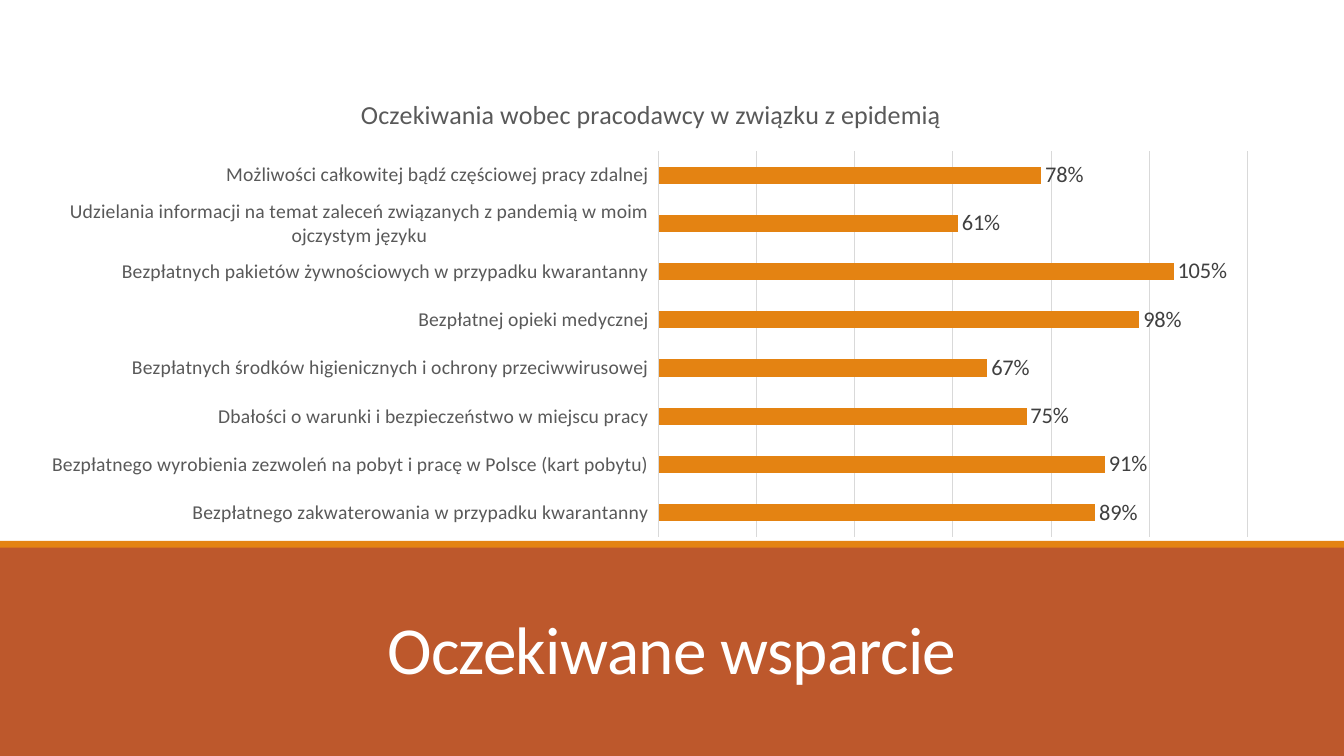
from dataclasses import dataclass

from lxml.etree import SubElement
from pptx import Presentation
from pptx.chart.data import CategoryChartData
from pptx.dml.color import RGBColor
from pptx.enum.chart import XL_CHART_TYPE, XL_LABEL_POSITION, XL_TICK_LABEL_POSITION, XL_TICK_MARK
from pptx.enum.shapes import MSO_SHAPE
from pptx.enum.text import MSO_ANCHOR, MSO_AUTO_SIZE, PP_ALIGN
from pptx.oxml import parse_xml
from pptx.oxml.ns import nsdecls, qn
from pptx.util import Inches, Pt


@dataclass(frozen=True)
class Theme:
    font: str = "Calibri"
    rust: str = "BD582C"
    orange: str = "E48312"
    white: str = "FFFFFF"
    grey: str = "595959"
    dark: str = "404040"
    rule: str = "D9D9D9"
    title_size: float = 48
    chart_title_size: float = 18.6
    label_size: float = 16
    category_size: float = 14


EXPECTATIONS = [
    ("Bezpłatnego zakwaterowania w przypadku kwarantanny", 0.89),
    ("Bezpłatnego wyrobienia zezwoleń na pobyt i pracę w Polsce (kart pobytu)", 0.91),
    ("Dbałości o warunki i bezpieczeństwo w miejscu pracy", 0.75),
    ("Bezpłatnych środków higienicznych i ochrony przeciwwirusowej", 0.67),
    ("Bezpłatnej opieki medycznej", 0.98),
    ("Bezpłatnych pakietów żywnościowych w przypadku kwarantanny", 1.05),
    ("Udzielania informacji na temat zaleceń związanych z pandemią w moim ojczystym języku", 0.61),
    ("Możliwości całkowitej bądź częściowej pracy zdalnej", 0.78),
]


class SlideBuilder:
    COLUMNS, ROWS = 40, 22.5

    def __init__(self, deck, theme):
        self.theme = theme
        self.column = deck.slide_width / self.COLUMNS
        self.row = deck.slide_height / self.ROWS
        self.page = deck.slides.add_slide(deck.slide_layouts[5])

    def place(self, left, top, width, height):
        return (round(left * self.column), round(top * self.row),
                round(width * self.column), round(height * self.row))

    def style(self, font, size, color):
        font.name = self.theme.font
        font.size = Pt(size)
        font.bold = False
        font.color.rgb = RGBColor.from_string(color)

    def rule(self, line):
        line.color.rgb = RGBColor.from_string(self.theme.rule)
        line.width = Pt(0.75)

    def band(self, top, height, color):
        box = self.page.shapes.add_shape(
            MSO_SHAPE.RECTANGLE, *self.place(0, top, self.COLUMNS, height))
        box.shadow.inherit = False
        box.fill.solid()
        box.fill.fore_color.rgb = RGBColor.from_string(color)
        box.line.fill.background()
        return box

    def title(self, text, area, behind):
        box = self.page.shapes.title
        box.left, box.top, box.width, box.height = self.place(*area)
        behind.element.addnext(box.element)
        frame = box.text_frame
        frame.text = text
        frame.word_wrap = True
        frame.auto_size = MSO_AUTO_SIZE.NONE
        frame.vertical_anchor = MSO_ANCHOR.BOTTOM
        para = frame.paragraphs[0]
        para.alignment = PP_ALIGN.CENTER
        para.line_spacing = 0.85
        span = para.runs[0]
        self.style(span.font, self.theme.title_size, self.theme.white)
        span.font.element.set("spc", "-50") if hasattr(span.font, "element") else \
            span._r.get_or_add_rPr().set("spc", "-50")

    def bar_chart(self, heading, rows, area, plot_area):
        theme = self.theme
        data = CategoryChartData(number_format="0%")
        data.categories = [name for name, _ in rows]
        data.add_series("Series 1", [value for _, value in rows])
        chart = self.page.shapes.add_chart(
            XL_CHART_TYPE.BAR_CLUSTERED, *self.place(*area), data).chart
        self.style(chart.font, theme.label_size, theme.dark)
        chart.has_legend = False
        chart.has_title = True
        frame = chart.chart_title.text_frame
        frame.text = heading
        self.style(frame.paragraphs[0].runs[0].font, theme.chart_title_size, theme.grey)

        categories = chart.category_axis
        categories.major_tick_mark = XL_TICK_MARK.NONE
        categories.tick_label_position = XL_TICK_LABEL_POSITION.LOW
        self.style(categories.tick_labels.font, theme.category_size, theme.grey)
        self.rule(categories.format.line)

        values = chart.value_axis
        values.minimum_scale, values.maximum_scale, values.major_unit = 0, 1.2, 0.2
        values.visible = False
        self.rule(values.major_gridlines.format.line)

        plot = chart.plots[0]
        plot.gap_width = 182
        plot.vary_by_categories = False
        series = plot.series[0]
        series.format.fill.solid()
        series.format.fill.fore_color.rgb = RGBColor.from_string(theme.orange)
        labels = series.data_labels
        labels.show_value = True
        labels.position = XL_LABEL_POSITION.OUTSIDE_END
        labels.number_format = "0%"
        labels.number_format_is_linked = False
        self.style(labels.font, theme.label_size, theme.dark)
        self.fix_plot_area(chart, plot_area)

    def fix_plot_area(self, chart, plot_area):
        plot = chart.element.find(".//" + qn("c:plotArea"))
        for layout in plot.findall(qn("c:layout")):
            plot.remove(layout)
        layout = parse_xml(f"<c:layout {nsdecls('c')}><c:manualLayout/></c:layout>")
        settings = [("layoutTarget", "inner"), ("xMode", "edge"), ("yMode", "edge")]
        settings += zip("xywh", plot_area)
        for tag, value in settings:
            SubElement(layout[0], qn(f"c:{tag}")).set("val", str(value))
        plot.insert(0, layout)


def main():
    deck = Presentation()
    deck.slide_width, deck.slide_height = Inches(13.33), Inches(7.5)
    theme = Theme()
    slide = SlideBuilder(deck, theme)
    footer = slide.band(16.25, 6.25, theme.rust)
    slide.title("Oczekiwane wsparcie", (3.5, 17.22, 33, 3.4), footer)
    slide.band(16.1, 0.2, theme.orange)
    slide.bar_chart("Oczekiwania wobec pracodawcy w związku z epidemią", EXPECTATIONS,
                    (0.87, 2.28, 37.03, 13.95), (0.506, 0.159, 0.473, 0.823))
    deck.save("out.pptx")


if __name__ == "__main__":
    main()
